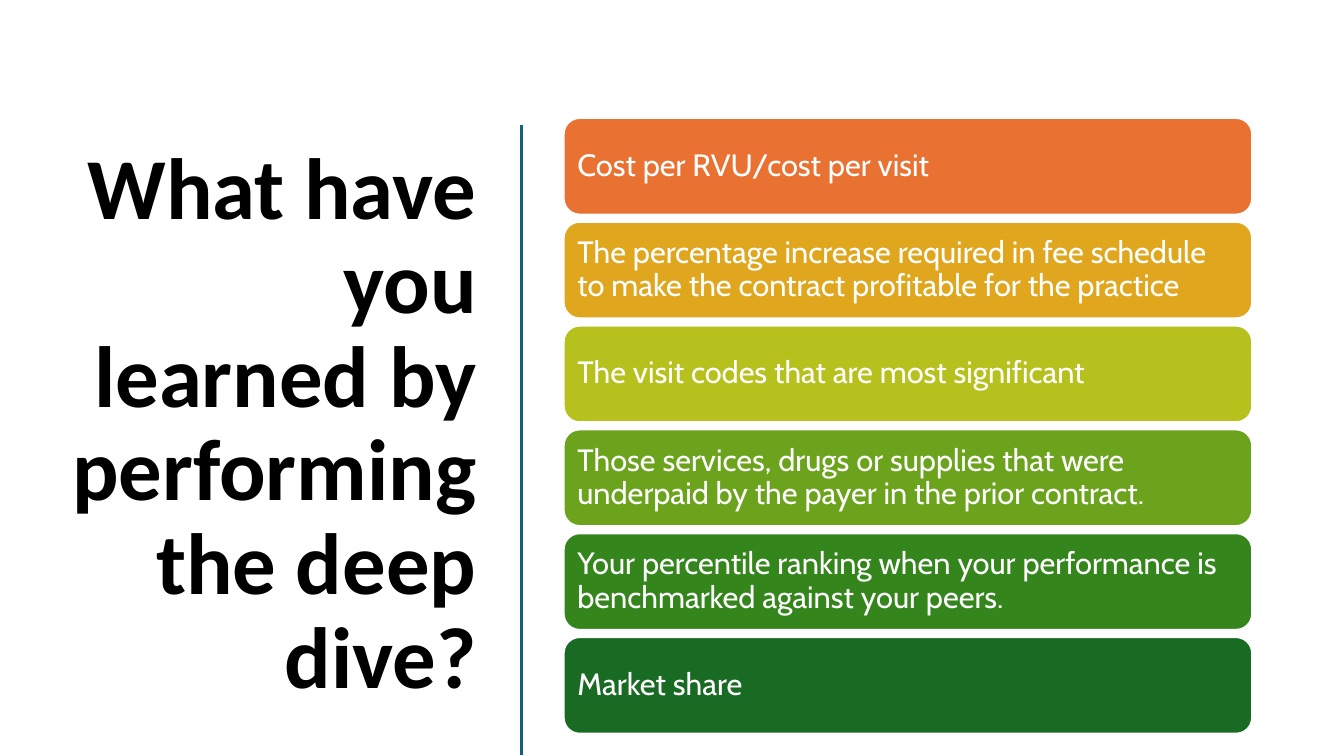
"""Build a slide listing what a deep dive into payer contracts teaches."""
from lxml import etree
from pptx import Presentation
from pptx.dml.color import RGBColor
from pptx.enum.shapes import MSO_CONNECTOR, MSO_SHAPE
from pptx.enum.text import MSO_ANCHOR, MSO_AUTO_SIZE, PP_ALIGN
from pptx.oxml.ns import qn
from pptx.util import Inches, Pt

ROUNDED = MSO_SHAPE.ROUNDED_RECTANGLE
STRAIGHT = MSO_CONNECTOR.STRAIGHT
MIDDLE = MSO_ANCHOR.MIDDLE
NO_AUTOFIT = MSO_AUTO_SIZE.NONE
LEFT = PP_ALIGN.LEFT
RIGHT = PP_ALIGN.RIGHT

COLORS = {
    "black": "000000",
    "white": "FFFFFF",
    "blue": "156082",
    "orange": "E97132",
    "amber": "E0A61D",
    "lime": "B7C11E",
    "light green": "6BA31D",
    "green": "34861C",
    "dark green": "196B24",
}
LESSONS = [
    ("orange", "Cost per RVU/cost per visit"),
    ("amber", "The percentage increase required in fee schedule to make the contract profitable for the practice"),
    ("lime", "The visit codes that are most significant"),
    ("light green", "Those services, drugs or supplies that were underpaid by the payer in the prior contract."),
    ("green", "Your percentile ranking when your performance is benchmarked against your peers."),
    ("dark green", "Market share"),
]
TOP = 1.17
BAR_PITCH = 1.03


def color(name):
    return RGBColor.from_string(COLORS[name])


def write_text(shape, text, font_name, size, color_name, alignment, bold=False):
    frame = shape.text_frame
    frame.word_wrap = True
    frame.auto_size = NO_AUTOFIT
    frame.vertical_anchor = MIDDLE
    paragraph = frame.paragraphs[0]
    paragraph.alignment = alignment
    paragraph.line_spacing = 0.9
    run = paragraph.add_run()
    run.text = text
    run.font.name = font_name
    run.font.size = Pt(size)
    run.font.bold = bold
    run.font.color.rgb = color(color_name)


presentation = Presentation()
presentation.slide_width = Inches(13.33)
presentation.slide_height = Inches(7.5)
slide = presentation.slides.add_slide(presentation.slide_layouts[5])

title = slide.shapes.title
title.left, title.top = Inches(0.52), Inches(TOP)
title.width, title.height = Inches(4.31), Inches(6.11)
write_text(title, "What have you learned by performing the deep dive?",
           "Calibri", 62, "black", RIGHT, bold=True)

divider = slide.shapes.add_connector(
    STRAIGHT, Inches(5.17), Inches(1.24), Inches(5.17), Inches(7.49))
divider.line.color.rgb = color("blue")
divider.line.width = Pt(2)
etree.SubElement(divider._element.spPr, qn("a:effectLst"))

for index, (fill_name, lesson) in enumerate(LESSONS):
    bar = slide.shapes.add_shape(
        ROUNDED, Inches(5.59), Inches(TOP + index * BAR_PITCH), Inches(6.83), Inches(0.96))
    bar.shadow.inherit = False
    bar.fill.solid()
    bar.fill.fore_color.rgb = color(fill_name)
    bar.line.color.rgb = color("white")
    bar.line.width = Pt(1.5)
    frame = bar.text_frame
    frame.margin_left = frame.margin_right = Inches(0.09)
    frame.margin_top = frame.margin_bottom = Inches(0.09)
    write_text(bar, lesson, "Cabin", 22, "white", LEFT)

presentation.save("out.pptx")
